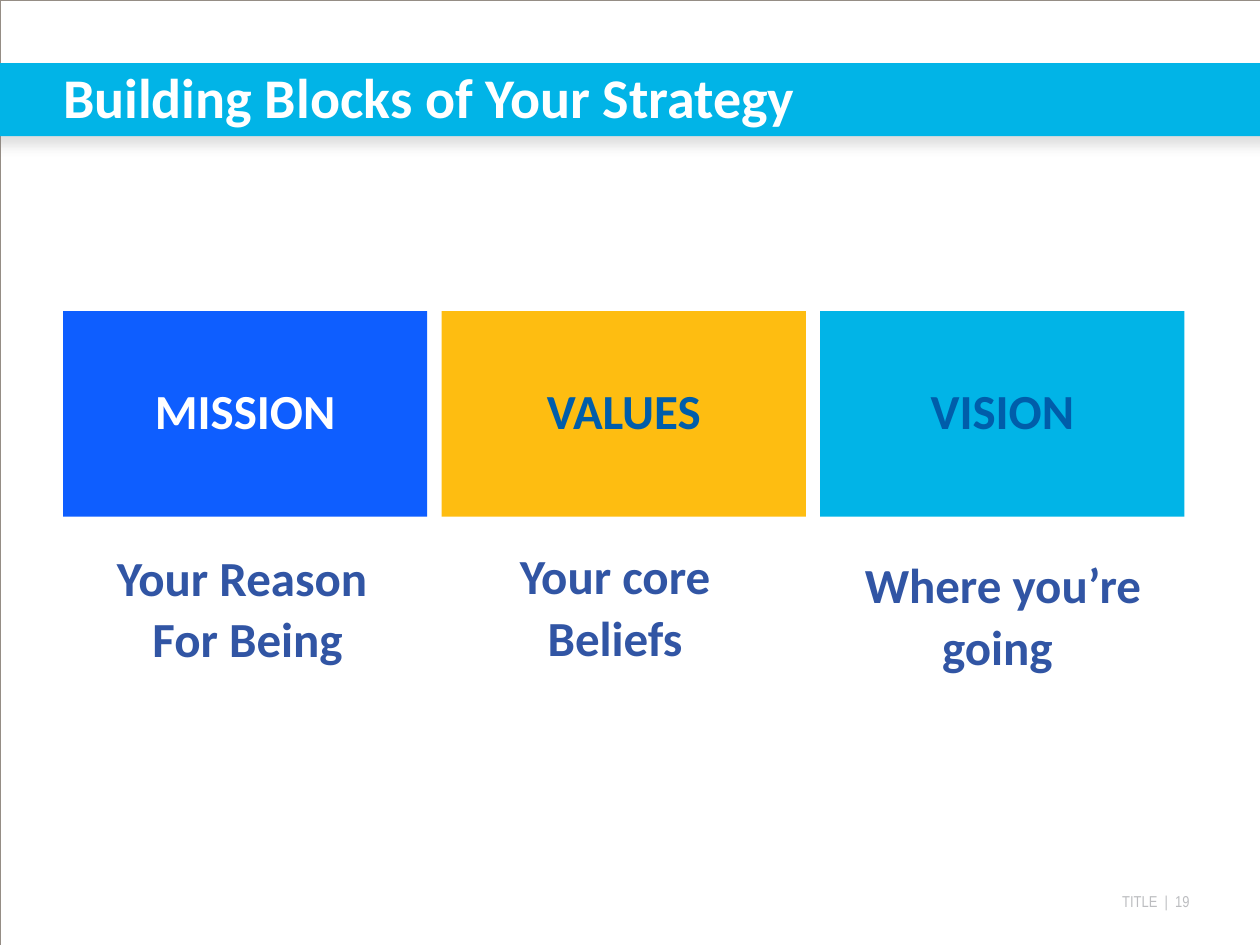
from lxml import etree
from pptx import Presentation
from pptx.dml.color import RGBColor
from pptx.enum.shapes import MSO_SHAPE
from pptx.enum.text import MSO_ANCHOR, PP_ALIGN
from pptx.oxml import parse_xml
from pptx.util import Inches, Pt

RECT = MSO_SHAPE.RECTANGLE
TOP, MIDDLE = MSO_ANCHOR.TOP, MSO_ANCHOR.MIDDLE
LEFT, CENTER, RIGHT = PP_ALIGN.LEFT, PP_ALIGN.CENTER, PP_ALIGN.RIGHT
BLUE, YELLOW, CYAN = "0E5EFF", "FEBD11", "01B4E7"
WHITE, NAVY, INDIGO = "FFFFFF", "005DAA", "3155A4"
SHADOW = (
    '<a:effectLst xmlns:a="http://schemas.openxmlformats.org/drawingml/2006/main">'
    '<a:outerShdw blurRad="88900" dist="60960" dir="5400000" algn="t" rotWithShape="0">'
    '<a:srgbClr val="808080"><a:alpha val="25000"/></a:srgbClr>'
    '</a:outerShdw></a:effectLst>'
)


def rgb(value):
    return RGBColor.from_string(value)


def write(s, text, size, color, align, anchor=TOP, spacing=None,
          font="Calibri", bold=True, inset=True):
    tf = s.text_frame
    tf.word_wrap = True
    tf.vertical_anchor = anchor
    if not inset:
        tf.margin_left = tf.margin_right = tf.margin_top = tf.margin_bottom = 0
    p = tf.paragraphs[0]
    p.text = text
    p.alignment = align
    if spacing:
        p.line_spacing = spacing
    p.font.name = font
    p.font.size = Pt(size)
    p.font.bold = bold
    p.font.color.rgb = rgb(color)


prs = Presentation()
prs.slide_width, prs.slide_height = Inches(10), Inches(7.5)
slide = prs.slides.add_slide(prs.slide_layouts[6])
shapes = slide.shapes

# Footer
s = shapes.add_textbox(Inches(7.75), Inches(7.08), Inches(1.69), Inches(0.15))
write(s, "TITLE  |  19", 9, "BCBDC0", RIGHT, font="Arial Narrow", bold=False, inset=False)

# Slide frame
s = shapes.add_shape(RECT, 0, 0, prs.slide_width, prs.slide_height)
s.shadow.inherit = False
s.fill.background()
s.line.color.rgb = rgb("958D85")
s.line.width = Pt(0.13)

# Title band with a soft shadow below
s = shapes.add_shape(RECT, Inches(-0.08), Inches(0.5), Inches(10.17), Inches(0.58))
s.fill.solid()
s.fill.fore_color.rgb = rgb(CYAN)
s.line.fill.background()
s._element.spPr.append(parse_xml(SHADOW))

# Title
s = shapes.add_textbox(Inches(0.5), Inches(0.5), Inches(8.75), Inches(0.53))
write(s, "Building Blocks of Your Strategy", 32, WHITE, LEFT, MIDDLE, inset=False)

# Building blocks
blocks = [("MISSION", BLUE, WHITE), ("VALUES", YELLOW, NAVY), ("VISION", CYAN, NAVY)]
for i, (name, fill, color) in enumerate(blocks):
    s = shapes.add_shape(RECT, Inches(0.5 + 3.005 * i), Inches(2.47), Inches(2.89), Inches(1.63))
    s.shadow.inherit = False
    s.fill.solid()
    s.fill.fore_color.rgb = rgb(fill)
    s.line.fill.background()
    write(s, name, 28, color, CENTER, MIDDLE, 0.9)

# Explanations under the blocks
captions = [
    ("Your Reason \vFor Being", 0.45, 4.27, 3.03),
    ("Your core \vBeliefs ", 3.43, 4.26, 2.99),
    ("Where you’re going ", 6.51, 4.33, 2.9),
]
for text, left, top, width in captions:
    s = shapes.add_textbox(Inches(left), Inches(top), Inches(width), Inches(1.09))
    write(s, text, 28, INDIGO, CENTER, spacing=1.05)

prs.save("out.pptx")
